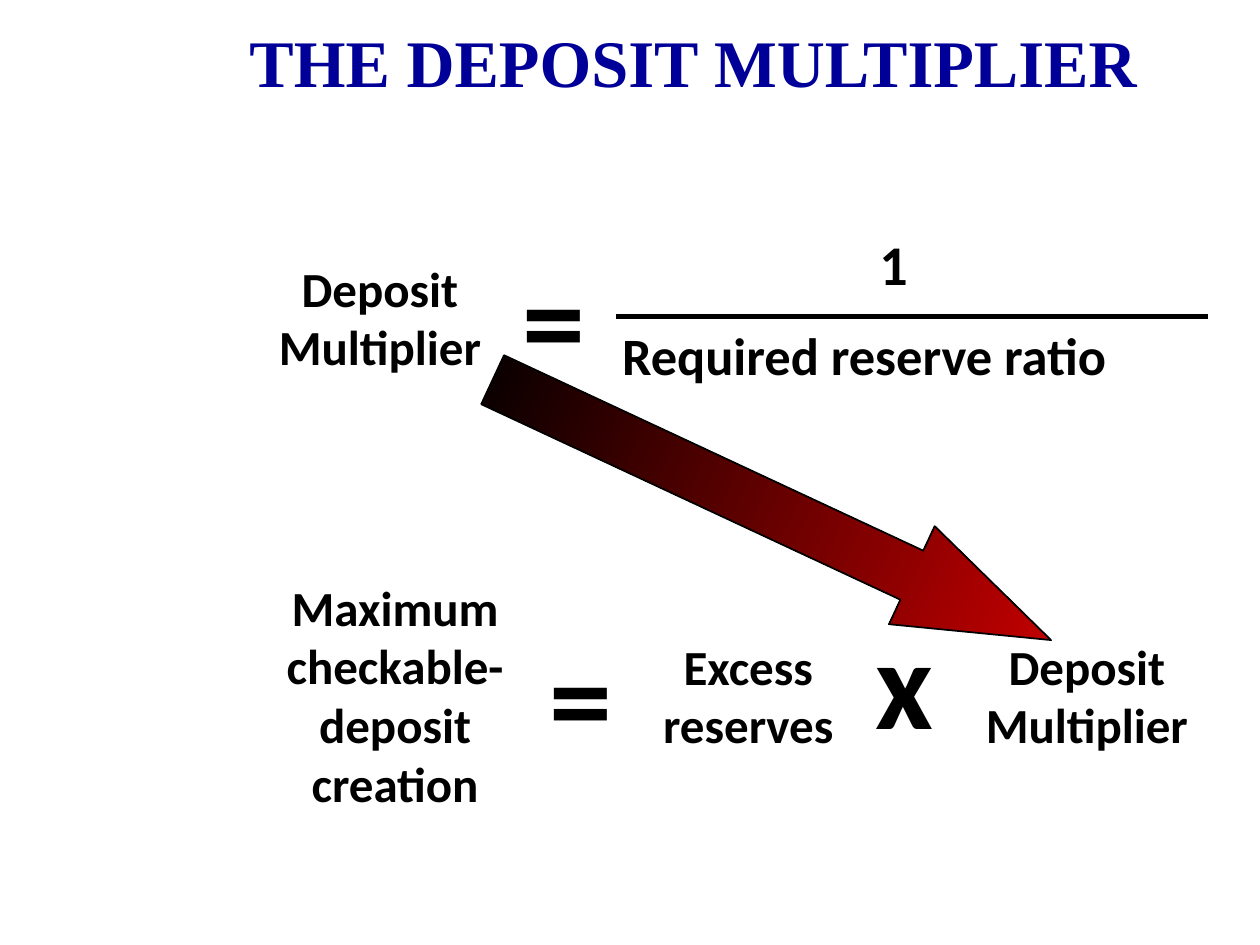
from dataclasses import dataclass

from lxml import etree
from pptx import Presentation
from pptx.dml.color import RGBColor
from pptx.enum.shapes import MSO_CONNECTOR as Connector, MSO_SHAPE as Shape
from pptx.enum.text import MSO_AUTO_SIZE as AutoSize, PP_ALIGN as Align
from pptx.oxml.ns import qn
from pptx.util import Cm, Pt


@dataclass(frozen=True)
class Theme:
    ink: RGBColor = RGBColor(0x00, 0x00, 0x00)
    navy: RGBColor = RGBColor(0x00, 0x00, 0x99)
    red: RGBColor = RGBColor(0xCC, 0x00, 0x00)
    body_font: str = "Calibri"
    title_font: str = "Times New Roman"
    title: int = 38
    term: int = 28
    denominator: int = 30
    numerator: int = 32
    operator: int = 72


theme = Theme()


def add_label(parent, lines, box, size, align=Align.LEFT,
              font=theme.body_font, color=theme.ink):
    label = parent.shapes.add_textbox(*(Cm(value) for value in box))
    frame = label.text_frame
    frame.word_wrap = False
    frame.auto_size = AutoSize.SHAPE_TO_FIT_TEXT
    frame.text = lines
    for paragraph in frame.paragraphs:
        paragraph.alignment = align
        paragraph.font.name = font
        paragraph.font.size = Pt(size)
        paragraph.font.bold = True
        paragraph.font.color.rgb = color


prs = Presentation()
prs.slide_width, prs.slide_height = Cm(25.4), Cm(19.05)
slide = prs.slides.add_slide(prs.slide_layouts[6])

# Lower equation: maximum deposit creation = excess reserves x multiplier
creation = slide.shapes.add_group_shape()
for term, box in (
    ("Maximum\ncheckable-\ndeposit\ncreation", (5.16, 11.51, 5.61, 5)),
    ("Excess\nreserves", (12.8, 12.7, 4.57, 2.62)),
    ("Deposit\nMultiplier", (19.46, 12.7, 4.9, 2.62)),
):
    add_label(creation, term, box, theme.term, Align.CENTER)
add_label(creation, "=", (10.82, 12.34, 1.98, 3.3), theme.operator)
add_label(creation, "x", (17.4, 12.04, 1.9, 3.3), theme.operator)

# Upper equation: deposit multiplier = 1 / required reserve ratio
multiplier = slide.shapes.add_group_shape()
add_label(multiplier, "Deposit\nMultiplier", (5.21, 5.08, 4.9, 2.62),
          theme.term, Align.CENTER)
add_label(multiplier, "=", (10.29, 4.72, 1.98, 3.3), theme.operator)
add_label(multiplier, "1", (17.48, 4.5, 1.12, 1.6), theme.numerator)
add_label(multiplier, "Required reserve ratio", (12.29, 6.38, 11.73, 1.52),
          theme.denominator)
fraction_bar = multiplier.shapes.add_connector(
    Connector.STRAIGHT, Cm(12.42), Cm(6.38), Cm(24.36), Cm(6.38))
fraction_bar.line.color.rgb = theme.ink
fraction_bar.line.width = Pt(3)
etree.SubElement(fraction_bar._element.spPr, qn("a:effectLst"))

# Title
add_label(slide, "THE DEPOSIT MULTIPLIER", (4.78, 0.3, 18.54, 1.85),
          theme.title, font=theme.title_font, color=theme.navy)

# Arrow carrying the multiplier into the lower equation
arrow = slide.shapes.add_shape(
    Shape.RIGHT_ARROW, Cm(9.35), Cm(9.19), Cm(12.42), Cm(2.18))
arrow.rotation = 25
arrow.adjustments[0], arrow.adjustments[1] = 0.5, 1.42
arrow.shadow.inherit = False
arrow.fill.gradient()
arrow.fill.gradient_angle = 0
for stop, color in zip(arrow.fill.gradient_stops, (theme.ink, theme.red)):
    stop.color.rgb = color
arrow.line.color.rgb = theme.ink
arrow.line.width = Pt(1)

prs.save("out.pptx")
